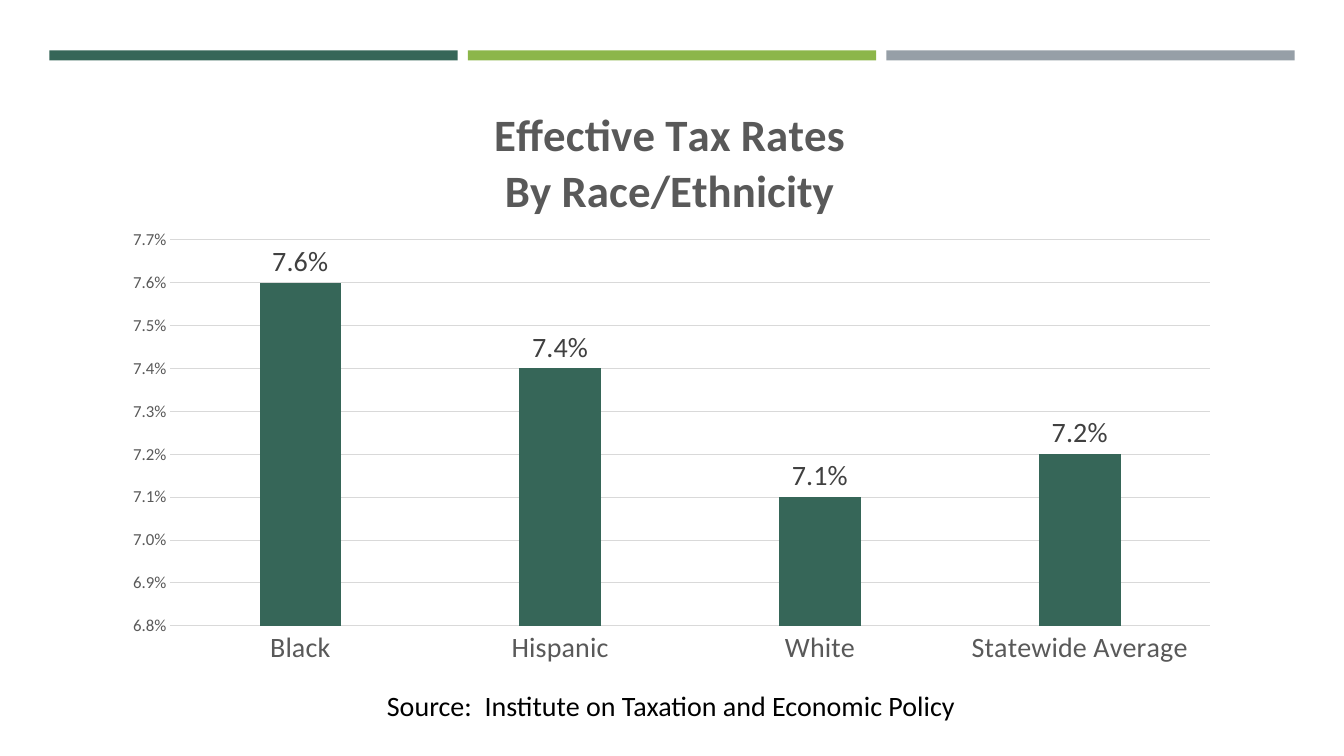
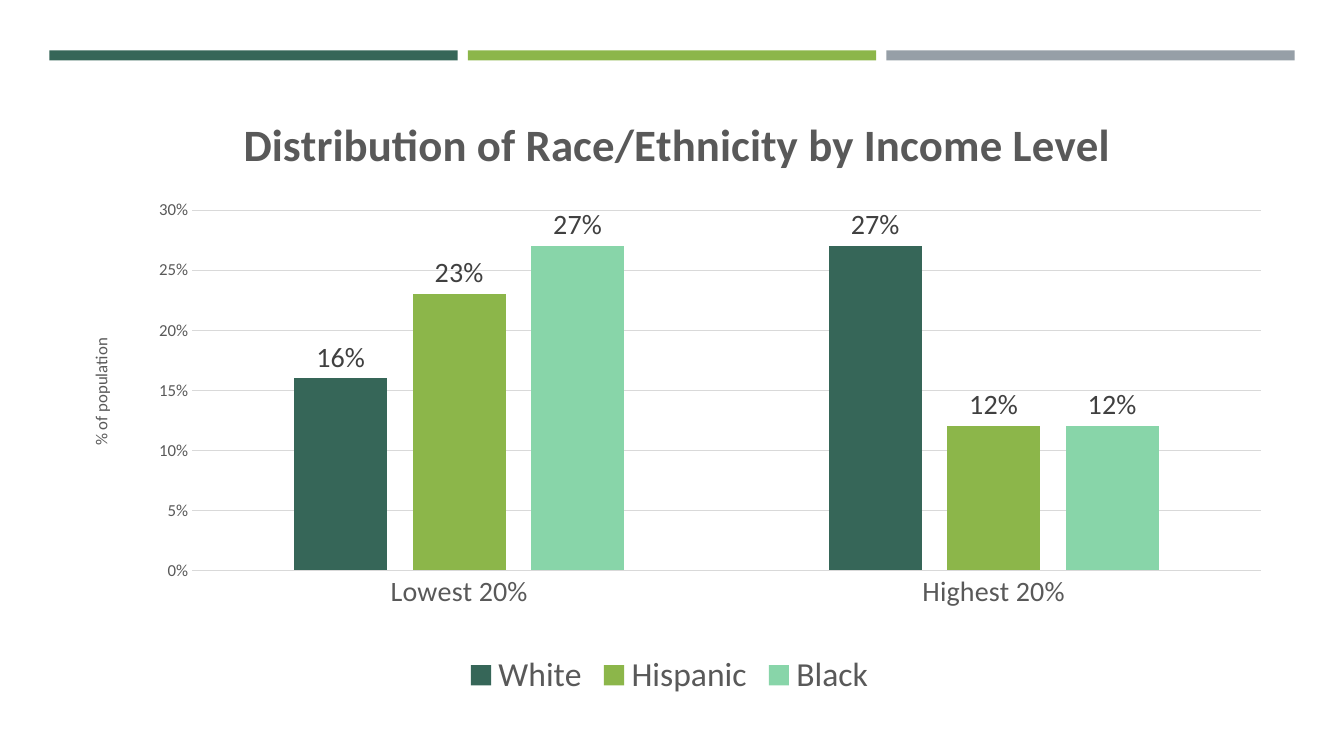
from dataclasses import dataclass

from pptx import Presentation
from pptx.chart.data import CategoryChartData
from pptx.dml.color import RGBColor
from pptx.enum import chart as ch, shapes, text
from pptx.oxml import parse_xml
from pptx.oxml.ns import nsdecls, qn
from pptx.util import Inches, Pt


@dataclass(frozen=True)
class Theme:
    font: str = "Calibri"
    green: str = "366658"
    lime: str = "8CB64A"
    mint: str = "88D5A9"
    slate: str = "969FA7"
    grey: str = "595959"
    dark: str = "404040"
    rule: str = "D9D9D9"
    black: str = "000000"
    head: int = 32
    key: int = 24
    body: int = 20
    small: int = 12


T = Theme()


# Text and colour
def style(font, size=T.body, color=T.grey, bold=False):
    font.name, font.size, font.bold = T.font, Pt(size), bold
    font.color.rgb = RGBColor.from_string(color)


def write(frame, *lines, **fmt):
    for i, line in enumerate(lines):
        para = frame.add_paragraph() if i else frame.paragraphs[0]
        para.alignment = text.PP_ALIGN.CENTER
        run = para.add_run()
        run.text = line
        style(run.font, **fmt)


def paint(fill, color):
    fill.solid()
    fill.fore_color.rgb = RGBColor.from_string(color)


# Coloured bands, kept on the master for every slide
def bands(master, slide):
    tree = master.shapes.element
    for i, color in enumerate((T.green, T.lime, T.slate)):
        band = slide.shapes.add_shape(
            shapes.MSO_SHAPE.RECTANGLE, Inches(0.49 + 4.15 * i), Inches(0.5),
            Inches(4.05), Inches(0.1))
        band.shadow.inherit = False
        band.line.fill.background()
        paint(band.fill, color)
        band.name = f"Band {i + 1}"
        band.element.nvSpPr.cNvPr.set("id", str(100 + i))
        tree.append(band.element)


# Chart parts
def place(node, index, x, y, w=None, h=None):
    """Set a manual layout, in fractions of the chart."""
    old = node.find(qn("c:layout"))
    if old is not None:
        node.remove(old)
    inner = '<c:layoutTarget val="inner"/>' if w else ""
    size = f'<c:w val="{w}"/><c:h val="{h}"/>' if w else ""
    node.insert(index, parse_xml(
        f'<c:layout {nsdecls("c")}><c:manualLayout>{inner}'
        '<c:xMode val="edge"/><c:yMode val="edge"/>'
        f'<c:x val="{x}"/><c:y val="{y}"/>{size}'
        '</c:manualLayout></c:layout>'))


def rule(line):
    line.width = Pt(0.75)
    line.color.rgb = RGBColor.from_string(T.rule)


def axes(chart, low, high, step, fmt):
    cat, val = chart.category_axis, chart.value_axis
    for axis, size in ((cat, T.body), (val, T.small)):
        axis.major_tick_mark = axis.minor_tick_mark = ch.XL_TICK_MARK.NONE
        style(axis.tick_labels.font, size)
    rule(cat.format.line)
    val.format.line.fill.background()
    val.has_major_gridlines = True
    rule(val.major_gridlines.format.line)
    val.minimum_scale, val.maximum_scale, val.major_unit = low, high, step
    val.tick_labels.number_format = fmt
    val.tick_labels.number_format_is_linked = False


def columns(slide, box, title, spot, cats, rows, scale, fmt, plot):
    data = CategoryChartData(number_format=fmt)
    data.categories = cats
    for name, vals, _ in rows:
        data.add_series(name, vals)
    chart = slide.shapes.add_chart(
        ch.XL_CHART_TYPE.COLUMN_CLUSTERED, *map(Inches, box), data).chart
    style(chart.font, 10, T.black)
    chart.has_legend = False

    chart.has_title = True
    write(chart.chart_title.text_frame, *title, size=T.head, bold=True)
    place(chart.chart_title.element, 1, *spot)
    place(chart.element.find(".//" + qn("c:plotArea")), 0, *plot)
    axes(chart, *scale, fmt)

    bars = chart.plots[0]
    bars.gap_width, bars.overlap, bars.vary_by_categories = 219, -27, False
    for series, (_, _, color) in zip(bars.series, rows):
        paint(series.format.fill, color)
        series.invert_if_negative = False
        tags = series.data_labels
        tags.show_value = True
        tags.position = ch.XL_LABEL_POSITION.OUTSIDE_END
        tags.number_format, tags.number_format_is_linked = fmt, False
        style(tags.font, color=T.dark)
    return chart


def legend(chart):
    chart.has_legend = True
    chart.legend.position = ch.XL_LEGEND_POSITION.BOTTOM
    chart.legend.include_in_layout = False
    style(chart.legend.font, T.key)


def side(axis, label, spot):
    title = axis.axis_title
    write(title.text_frame, label, size=T.small)
    turn = title.element.find(".//" + qn("a:bodyPr"))
    turn.set("rot", "-5400000")
    turn.set("vert", "horz")
    place(title.element, 1, *spot)


def note(slide, line, box):
    frame = slide.shapes.add_textbox(*map(Inches, box)).text_frame
    frame.word_wrap = True
    frame.vertical_anchor = text.MSO_ANCHOR.MIDDLE
    write(frame, line, color=T.black)


# Slides
def rates(slide):
    columns(slide, (1.09, 0.79, 11.12, 5.93),
            ("Effective Tax Rates", "By Race/Ethnicity"), (0.34, 0.04),
            ("Black", "Hispanic", "White", "Statewide Average"),
            [("Series 1", (0.076, 0.074, 0.071, 0.072), T.green)],
            (0.068, 0.077, 0.001), "0.0%", (0.054, 0.268, 0.927, 0.646))
    note(slide, "Source:  Institute on Taxation and Economic Policy",
         (0.73, 6.81, 11.85, 0.38))


def levels(slide):
    chart = columns(
        slide, (0.49, 0.79, 12.3, 6.18),
        ("Distribution of Race/Ethnicity by Income Level",), (0.15, 0.04),
        ("Lowest 20%", "Highest 20%"),
        [("White", (0.16, 0.27), T.green),
         ("Hispanic", (0.23, 0.12), T.lime),
         ("Black", (0.27, 0.12), T.mint)],
        (0, 0.32, 0.05), "0%", (0.115, 0.171, 0.862, 0.617))
    legend(chart)
    side(chart.value_axis, "% of population", (0.03, 0.41))


def main():
    deck = Presentation()
    deck.slide_width, deck.slide_height = Inches(13.33), Inches(7.5)
    blank = deck.slide_layouts[6]
    first, second = (deck.slides.add_slide(blank) for _ in range(2))
    bands(deck.slide_master, first)
    rates(first)
    levels(second)
    deck.save("out.pptx")


if __name__ == "__main__":
    main()
